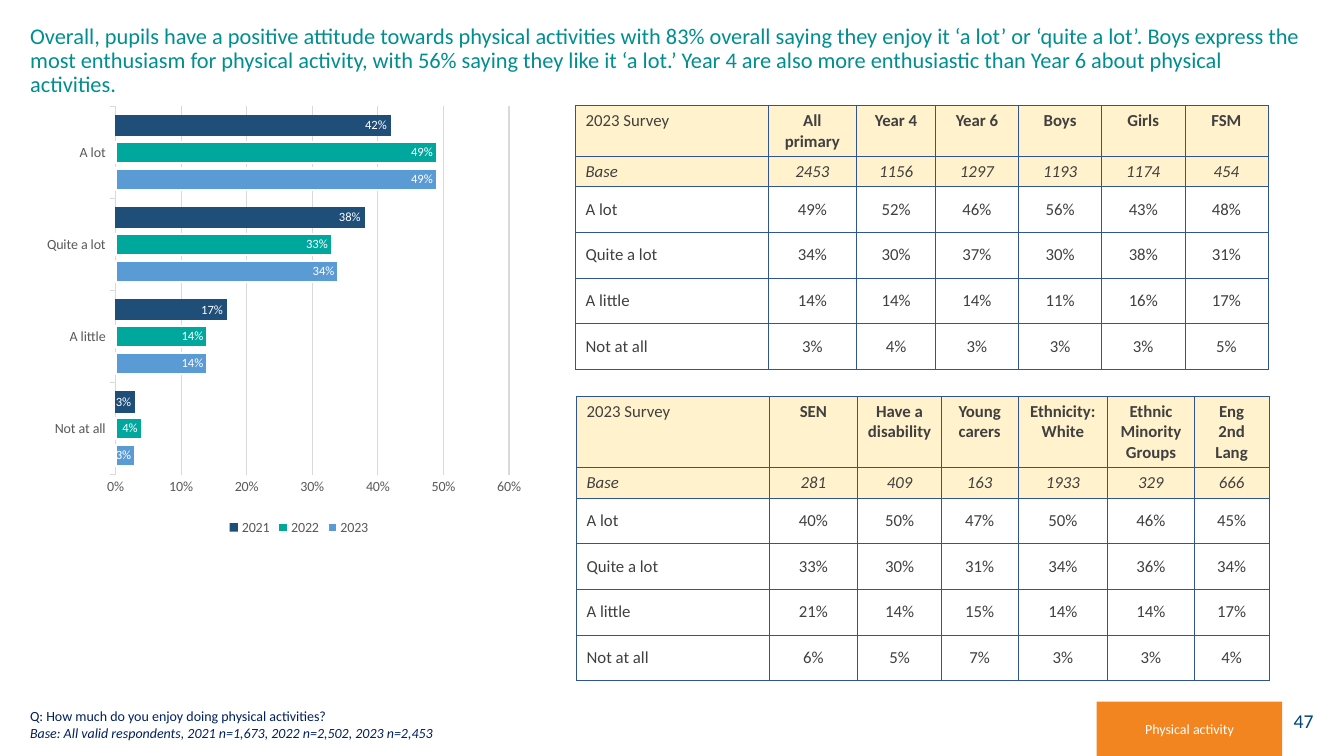
from lxml import etree
from pptx import Presentation
from pptx.chart.data import CategoryChartData
from pptx.dml.color import RGBColor
from pptx.enum.chart import XL_CHART_TYPE, XL_LABEL_POSITION, XL_LEGEND_POSITION, XL_TICK_MARK
from pptx.enum.shapes import MSO_SHAPE
from pptx.enum.text import MSO_ANCHOR, MSO_AUTO_SIZE, PP_ALIGN
from pptx.oxml.ns import qn
from pptx.util import Pt

BARS = XL_CHART_TYPE.BAR_CLUSTERED
INSIDE_END = XL_LABEL_POSITION.INSIDE_END
LEGEND_BOTTOM = XL_LEGEND_POSITION.BOTTOM
TICK_OUTSIDE, TICK_NONE = XL_TICK_MARK.OUTSIDE, XL_TICK_MARK.NONE
RECTANGLE = MSO_SHAPE.RECTANGLE
TOP, MIDDLE, BOTTOM = MSO_ANCHOR.TOP, MSO_ANCHOR.MIDDLE, MSO_ANCHOR.BOTTOM
NO_AUTOFIT = MSO_AUTO_SIZE.NONE
LEFT, CENTER, RIGHT = PP_ALIGN.LEFT, PP_ALIGN.CENTER, PP_ALIGN.RIGHT

FONT = "Calibri"
COLORS = {
    "title": "008E91", "page number": "004376", "question": "002060",
    "tag": "F2851F", "white": "FFFFFF", "header": "FFF2CC",
    "cell text": "404040", "border": "2F5597", "axis text": "595959", "grid": "D9D9D9",
    "2021": "1F4E79", "2022": "00A79D", "2023": "5B9BD5",
}
ANSWERS = ["A lot", "Quite a lot", "A little", "Not at all"]
TRENDS = {
    "2023": [0.49, 0.34, 0.14, 0.03],
    "2022": [0.49, 0.33, 0.14, 0.04],
    "2021": [0.42, 0.38, 0.17, 0.03],
}
YEAR_AND_GENDER = {
    "All primary": [2453, 49, 34, 14, 3],
    "Year 4": [1156, 52, 30, 14, 4],
    "Year 6": [1297, 46, 37, 14, 3],
    "Boys": [1193, 56, 30, 11, 3],
    "Girls": [1174, 43, 38, 16, 3],
    "FSM": [454, 48, 31, 17, 5],
}
PUPIL_GROUPS = {
    "SEN": [281, 40, 33, 21, 6],
    "Have a disability": [409, 50, 30, 14, 5],
    "Young carers": [163, 47, 31, 15, 7],
    "Ethnicity: White": [1933, 50, 34, 14, 3],
    "Ethnic Minority Groups": [329, 46, 36, 14, 3],
    "Eng 2nd Lang": [666, 45, 34, 17, 4],
}


def rgb(name):
    return RGBColor.from_string(COLORS[name])


class SurveySlide:
    def __init__(self, deck):
        self.page = deck.slides.add_slide(deck.slide_layouts[5])

    def style_font(self, font, size, color, bold=False, italic=False):
        font.name = FONT
        font.size = Pt(size)
        font.color.rgb = rgb(color)
        font.bold = bold
        font.italic = italic

    def style_text(self, frame, size, color, align=LEFT, bold=False, italic=False):
        for para in frame.paragraphs:
            para.alignment = align
            for span in para.runs:
                self.style_font(span.font, size, color, bold, italic)

    def title(self, left, top, width, height, text):
        box = self.page.shapes.title
        box.left, box.top, box.width, box.height = Pt(left), Pt(top), Pt(width), Pt(height)
        frame = box.text_frame
        frame.text = text
        frame.word_wrap = True
        frame.auto_size = NO_AUTOFIT
        frame.vertical_anchor = TOP
        frame.paragraphs[0].line_spacing = 0.9
        self.style_text(frame, 16, "title")

    def block(self, left, top, width, height, text, fill, size, color, align):
        box = self.page.shapes.add_shape(RECTANGLE, Pt(left), Pt(top), Pt(width), Pt(height))
        box.shadow.inherit = False
        box.fill.solid()
        box.fill.fore_color.rgb = rgb(fill)
        box.line.fill.background()
        box.text_frame.text = text
        box.text_frame.vertical_anchor = MIDDLE
        self.style_text(box.text_frame, size, color, align)

    def footnote(self, left, top, width, height, question, base):
        box = self.page.shapes.add_textbox(Pt(left), Pt(top), Pt(width), Pt(height))
        frame = box.text_frame
        frame.text = f"{question}\n{base}"
        frame.word_wrap = True
        frame.vertical_anchor = BOTTOM
        self.style_text(frame, 10, "question")
        frame.paragraphs[1].runs[0].font.italic = True

    def border(self, cell):
        properties = cell._tc.get_or_add_tcPr()
        for side in ("lnL", "lnR", "lnT", "lnB"):
            line = etree.SubElement(properties, qn(f"a:{side}"), w=str(Pt(0.5)))
            fill = etree.SubElement(line, qn("a:solidFill"))
            etree.SubElement(fill, qn("a:srgbClr"), val=COLORS["border"])

    def table(self, left, top, widths, header_height, groups):
        heights = [header_height, 21.9] + [32.6] * len(ANSWERS)
        frame = self.page.shapes.add_table(
            len(heights), len(widths), Pt(left), Pt(top), Pt(sum(widths)), Pt(sum(heights)))
        table = frame.table
        table.first_row = False
        table.horz_banding = False
        for column, width in zip(table.columns, widths):
            column.width = Pt(width)
        for row, height in zip(table.rows, heights):
            row.height = Pt(height)
        columns = [["2023 Survey", "Base", *ANSWERS]]
        for group, (base, *shares) in groups.items():
            columns.append([group, str(base), *(f"{share}%" for share in shares)])
        for column_index, texts in enumerate(columns):
            for row_index, text in enumerate(texts):
                cell = table.cell(row_index, column_index)
                cell.text_frame.text = text
                cell.vertical_anchor = MIDDLE if row_index else TOP
                self.style_text(
                    cell.text_frame, 12, "cell text",
                    align=CENTER if column_index else LEFT,
                    bold=row_index == 0 and column_index > 0,
                    italic=row_index == 1)
                self.border(cell)
                if row_index < 2:
                    cell.fill.solid()
                    cell.fill.fore_color.rgb = rgb("header")
                else:
                    cell.fill.background()

    def place_plot(self, chart, x, y, w, h):
        plot_area = chart._chartSpace.chart.plotArea
        for old_layout in plot_area.findall(qn("c:layout")):
            plot_area.remove(old_layout)
        layout = etree.Element(qn("c:layout"))
        plot_area.insert(0, layout)
        manual = etree.SubElement(layout, qn("c:manualLayout"))
        settings = {"layoutTarget": "inner", "xMode": "edge", "yMode": "edge",
                    "x": x, "y": y, "w": w, "h": h}
        for tag, value in settings.items():
            etree.SubElement(manual, qn(f"c:{tag}"), val=str(value))

    def bar_chart(self, left, top, width, height, trends):
        data = CategoryChartData(number_format="0%")
        data.categories = ANSWERS[::-1]
        for year, shares in trends.items():
            data.add_series(year, shares[::-1])
        chart = self.page.shapes.add_chart(
            BARS, Pt(left), Pt(top), Pt(width), Pt(height), data).chart
        self.style_font(chart.font, 10, "axis text")
        chart.has_title = False
        chart.has_legend = True
        chart.legend.position = LEGEND_BOTTOM
        chart.legend.include_in_layout = False
        self.style_font(chart.legend.font, 10, "axis text")
        self.place_plot(chart, 0.171, 0.033, 0.706, 0.823)

        answers, shares = chart.category_axis, chart.value_axis
        for axis in (answers, shares):
            self.style_font(axis.tick_labels.font, 10, "axis text")
        answers.major_tick_mark = TICK_OUTSIDE
        answers.format.line.color.rgb = rgb("grid")
        answers.format.line.width = Pt(0.75)
        shares.minimum_scale, shares.maximum_scale, shares.major_unit = 0, 0.6, 0.1
        shares.major_tick_mark = TICK_NONE
        shares.format.line.fill.background()
        shares.major_gridlines.format.line.color.rgb = rgb("grid")
        shares.major_gridlines.format.line.width = Pt(0.75)
        shares.tick_labels.number_format = "0%"
        shares.tick_labels.number_format_is_linked = False

        plot = chart.plots[0]
        plot.gap_width, plot.overlap, plot.vary_by_categories = 80, -25, False
        for series in plot.series:
            series.format.fill.solid()
            series.format.fill.fore_color.rgb = rgb(series.name)
            if series.name == "2021":
                series.format.line.fill.background()
            else:
                series.format.line.color.rgb = rgb("white")
                series.format.line.width = Pt(1.5)
            labels = series.data_labels
            labels.show_value = True
            labels.position = INSIDE_END
            labels.number_format = "0%"
            labels.number_format_is_linked = False
            self.style_font(labels.font, 9, "white")


def main():
    deck = Presentation()
    deck.slide_width, deck.slide_height = Pt(960), Pt(540)
    slide = SurveySlide(deck)
    slide.block(902.9, 500.4, 42.5, 28.8, "47", "white", 14, "page number", RIGHT)
    slide.bar_chart(14.4, 65.5, 398.2, 319.7, TRENDS)
    slide.title(
        14.4, 14.4, 931, 70.6,
        "Overall, pupils have a positive attitude towards physical activities with 83% overall "
        "saying they enjoy it ‘a lot’ or ‘quite a lot’. Boys express the most enthusiasm for "
        "physical activity, with 56% saying they like it ‘a lot.’ Year 4 are also more "
        "enthusiastic than Year 6 about physical activities.")
    slide.footnote(
        14.4, 501.1, 530.6, 31.7,
        "Q: How much do you enjoy doing physical activities?",
        "Base: All valid respondents, 2021 n=1,673, 2022 n=2,502, 2023 n=2,453")
    slide.block(783.4, 501.1, 132.5, 38.9, "Physical activity", "tag", 10, "white", CENTER)
    slide.table(411.1, 75.4, [137.5, 63.4, 56.2] + [59.4] * 4, 36, YEAR_AND_GENDER)
    slide.table(411.8, 283.2, [137.5, 63.4, 59.8, 54.7, 64.1, 61.9, 53.3], 50.7, PUPIL_GROUPS)
    deck.save("out.pptx")


if __name__ == "__main__":
    main()
